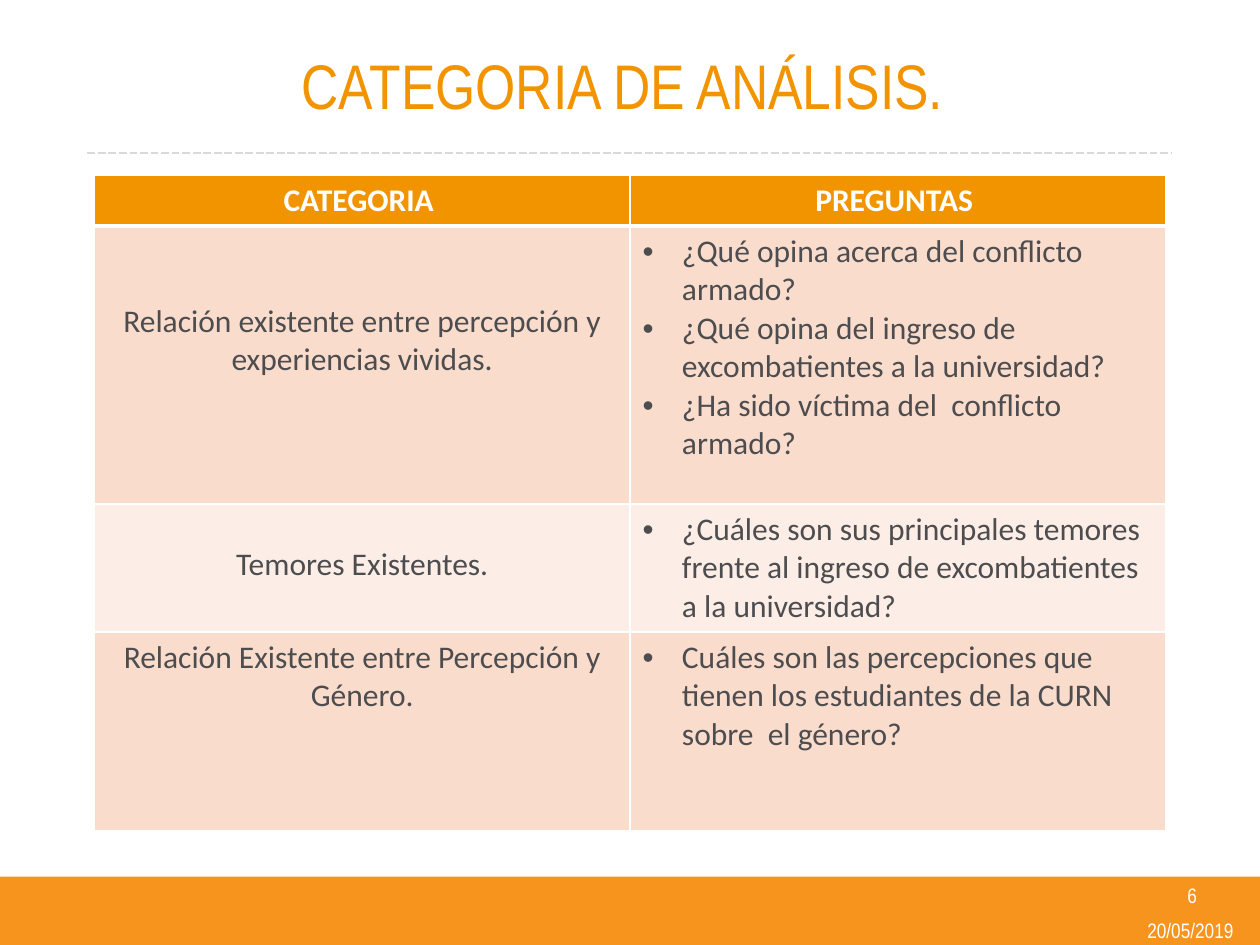
from dataclasses import dataclass

from lxml.etree import SubElement
from pptx import Presentation
from pptx.dml.color import RGBColor
from pptx.enum.dml import MSO_LINE
from pptx.enum.shapes import MSO_CONNECTOR, MSO_SHAPE
from pptx.enum.text import MSO_ANCHOR, PP_ALIGN
from pptx.oxml.ns import qn
from pptx.util import Pt


@dataclass(frozen=True)
class Theme:
    orange: str = "F29400"
    bar: str = "F7941D"
    rule: str = "D9D9D9"
    white: str = "FFFFFF"
    ink: str = "4D4D4F"
    bands: tuple = ("FADCCC", "FCEEE7")
    heading_font: str = "Arial Narrow"
    body_font: str = "Calibri"
    title_size: int = 36
    body_size: int = 18
    footer_size: int = 12


THEME = Theme()
HEADERS = ("CATEGORIA ", "PREGUNTAS ")
# Category, its drop below the top of the row, row height, questions
CATEGORIES = (
    ("Relación existente entre percepción y experiencias vividas.", 40, 158.8, (
        "¿Qué opina acerca del conflicto armado?",
        "¿Qué opina del ingreso de excombatientes a la universidad?",
        "¿Ha sido víctima del  conflicto armado?",
    )),
    ("Temores Existentes.", 20, 73.2, (
        "¿Cuáles son sus principales temores frente al ingreso de "
        "excombatientes a la universidad?",
    )),
    ("Relación Existente entre Percepción y Género.", 0, 113.4, (
        "Cuáles son las percepciones que tienen los estudiantes de la CURN "
        "sobre  el género?",
    )),
)
HEADER_HEIGHT = 29.2
CELL_MARGIN = 3.6
BULLET_INDENT = 22.5


def points(*lengths):
    return [Pt(length) for length in lengths]


def write(para, text, font, size, color, bold=False, align=PP_ALIGN.CENTER):
    para.alignment = align
    span = para.add_run()
    span.text = text
    values = {"name": font, "size": Pt(size), "bold": bold}
    for name, value in values.items():
        setattr(span.font, name, value)
    span.font.color.rgb = RGBColor.from_string(color)


def add_label(page, box, text, size, color):
    """Add one centred line in the heading font."""
    frame = page.shapes.add_textbox(*points(*box)).text_frame
    values = {"word_wrap": True, "vertical_anchor": MSO_ANCHOR.MIDDLE}
    for name, value in values.items():
        setattr(frame, name, value)
    write(frame.paragraphs[0], text, THEME.heading_font, size, color)


def add_header(page, box):
    left, top, width, height = box
    add_label(page, (left + 4, top, width - 8, height - 1),
              "CATEGORIA DE ANÁLISIS. ", THEME.title_size, THEME.orange)
    bottom = top + height
    rule = page.shapes.add_connector(
        MSO_CONNECTOR.STRAIGHT, *points(left, bottom, left + width, bottom))
    rule.line.color.rgb = RGBColor.from_string(THEME.rule)
    rule.line.width = Pt(1.5)
    rule.line.dash_style = MSO_LINE.SQUARE_DOT
    SubElement(rule._element.spPr, qn("a:effectLst"))


def add_footer(page, box):
    left, top, width, height = box
    bar = page.shapes.add_shape(MSO_SHAPE.RECTANGLE, *points(*box))
    bar.shadow.inherit = False
    bar.fill.solid()
    bar.fill.fore_color.rgb = RGBColor.from_string(THEME.bar)
    bar.line.fill.background()
    right = left + width
    add_label(page, (right - 78, top + 23, 76.5, 15), "20/05/2019",
              THEME.footer_size, THEME.white)
    add_label(page, (right - 76.5, top - 0.5, 75.5, 21.5), "6",
              THEME.footer_size, THEME.white)


def add_bullet(para):
    properties = para._p.get_or_add_pPr()
    indent = Pt(BULLET_INDENT)
    properties.set("marL", str(indent))
    properties.set("indent", str(-indent))
    SubElement(properties, qn("a:buFont"), typeface="Arial")
    SubElement(properties, qn("a:buChar"), char="•")


def style_cell(cell, fill, top_line=1, bottom_line=1):
    """Give a cell white borders, then its fill."""
    properties = cell._tc.get_or_add_tcPr()
    widths = {"lnL": 1, "lnR": 1, "lnT": top_line, "lnB": bottom_line}
    for tag, width in widths.items():
        edge = SubElement(properties, qn(f"a:{tag}"), w=str(Pt(width)))
        SubElement(SubElement(edge, qn("a:solidFill")), qn("a:srgbClr"),
                   val=THEME.white)
    cell.fill.solid()
    cell.fill.fore_color.rgb = RGBColor.from_string(fill)


def add_categories(page, box):
    heights = [HEADER_HEIGHT] + [category[2] for category in CATEGORIES]
    table = page.shapes.add_table(
        len(heights), len(HEADERS), *points(*box)).table
    table.first_row = table.horz_banding = False
    for row, height in zip(table.rows, heights):
        row.height = Pt(height)

    for column, text in enumerate(HEADERS):
        cell = table.cell(0, column)
        style_cell(cell, THEME.orange, bottom_line=3)
        write(cell.text_frame.paragraphs[0], text, THEME.body_font,
              THEME.body_size, THEME.white, bold=True)

    body = (THEME.body_font, THEME.body_size, THEME.ink)
    for row, (category, drop, _, questions) in enumerate(CATEGORIES, start=1):
        name_cell, question_cell = table.cell(row, 0), table.cell(row, 1)
        for cell in (name_cell, question_cell):
            style_cell(cell, THEME.bands[(row - 1) % 2],
                       top_line=3 if row == 1 else 1)
        name_cell.margin_top = Pt(CELL_MARGIN + drop)
        write(name_cell.text_frame.paragraphs[0], category, *body)
        frame = question_cell.text_frame
        for index, question in enumerate(questions):
            para = frame.add_paragraph() if index else frame.paragraphs[0]
            add_bullet(para)
            write(para, question, *body, align=PP_ALIGN.LEFT)


def main():
    deck = Presentation()
    deck.slide_width, deck.slide_height = points(720, 540)
    page = deck.slides.add_slide(deck.slide_layouts[6])
    add_footer(page, (0, 501, 720, 40))
    add_header(page, (50, 10, 620, 77.5))
    add_categories(page, (54, 100, 612, 374.6))
    deck.save("out.pptx")


if __name__ == "__main__":
    main()
